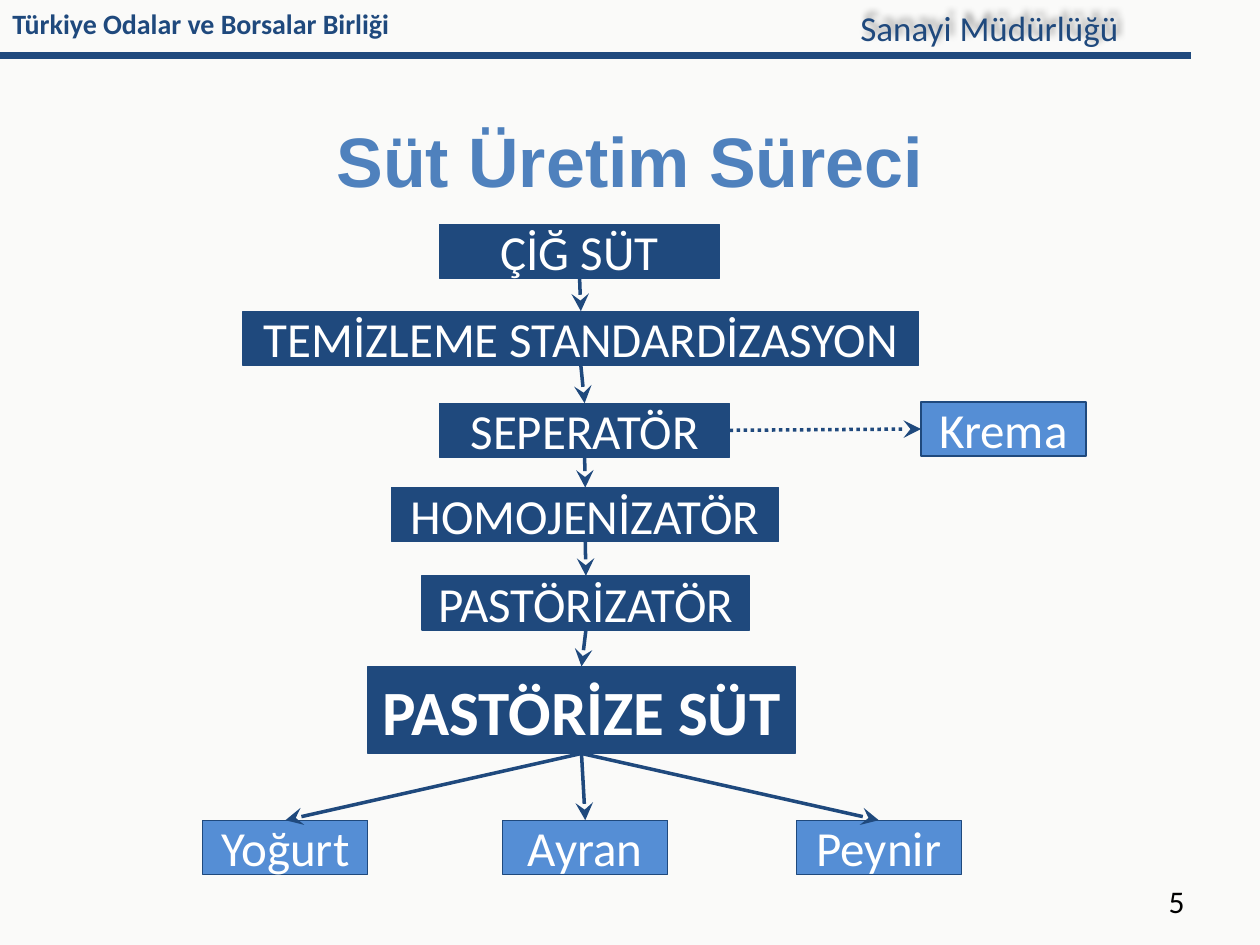
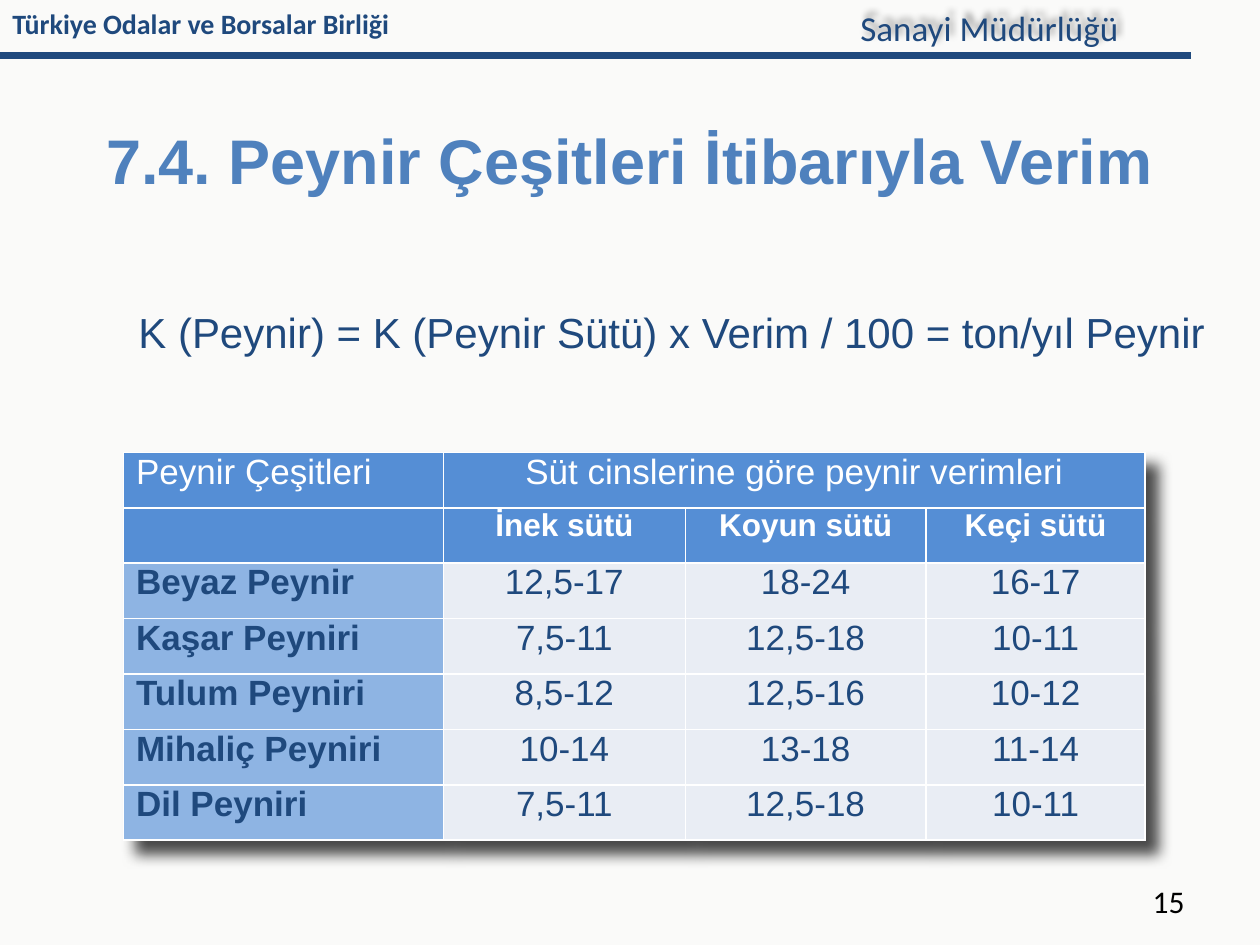
from pptx import Presentation
from pptx.dml.color import RGBColor
from pptx.enum.dml import MSO_LINE
from pptx.enum.shapes import MSO_CONNECTOR, MSO_SHAPE
from pptx.enum.text import MSO_ANCHOR, PP_ALIGN
from pptx.oxml import parse_xml
from pptx.oxml.ns import nsdecls
from pptx.util import Inches, Pt

LEFT, CENTER, RIGHT, JUSTIFY = PP_ALIGN.LEFT, PP_ALIGN.CENTER, PP_ALIGN.RIGHT, PP_ALIGN.JUSTIFY
MIDDLE = MSO_ANCHOR.MIDDLE
RECTANGLE = MSO_SHAPE.RECTANGLE
STRAIGHT = MSO_CONNECTOR.STRAIGHT
DOTTED = MSO_LINE.ROUND_DOT
TOP_SIDE, LEFT_SIDE, BOTTOM_SIDE, RIGHT_SIDE = range(4)

NAVY, BLUE, PALE_BLUE, TITLE_BLUE = "1F497D", "558ED5", "8EB4E3", "4F81BD"
WHITE, BLACK, PAPER, CELL_GREY = "FFFFFF", "000000", "FAFAF9", "E9EDF4"

NO_EFFECTS = f'<a:effectLst {nsdecls("a")}/>'
SHADOW = (f'<a:effectLst {nsdecls("a")}><a:outerShdw blurRad="%d" dist="%d" dir="%d" algn="tl" '
          'rotWithShape="0"><a:srgbClr val="000000"><a:alpha val="%d"/></a:srgbClr>'
          '</a:outerShdw></a:effectLst>')
ARROWHEAD = f'<a:tailEnd {nsdecls("a")} type="stealth" w="lg" len="lg"/>'
BORDER = (f'<a:%s {nsdecls("a")} w="12700"><a:solidFill><a:srgbClr val="{WHITE}"/>'
          '</a:solidFill></a:%s>')


def color(hex_value):
    return RGBColor.from_string(hex_value)


def write(text_frame, text, size, ink, bold=False, align=LEFT, font="Calibri"):
    paragraph = text_frame.paragraphs[0]
    paragraph.text = text
    paragraph.alignment = align
    paragraph.font.name = font
    paragraph.font.size = Pt(size)
    paragraph.font.bold = bold
    paragraph.font.color.rgb = color(ink)
    return paragraph


presentation = Presentation()
presentation.slide_width = Inches(10)
presentation.slide_height = Inches(7.5)
background = presentation.slide_master.background.fill
background.solid()
background.fore_color.rgb = color(PAPER)

# Shared header, title and page number
slides = []
for title, title_size, page_number in [
    ("Süt Üretim Süreci", 40, "5"),
    ("7.4. Peynir Çeşitleri İtibarıyla Verim", 36, "15"),
]:
    slide = presentation.slides.add_slide(presentation.slide_layouts[5])
    slides.append(slide)

    rule = slide.shapes.add_connector(STRAIGHT, 0, Inches(0.44), Inches(9.45), Inches(0.44))
    rule.line.color.rgb = color(NAVY)
    rule.line.width = Pt(4)
    rule._element.spPr.append(parse_xml(NO_EFFECTS))

    for left, top, width, height, text, size, ink, bold, align in [
        (0, 0, 8.15, 0.37, "Türkiye Odalar ve Borsalar Birliği", 16, NAVY, True, LEFT),
        (6.73, 0, 3.27, 0.44, "Sanayi Müdürlüğü", 20, NAVY, False, LEFT),
        (7.17, 6.95, 2.33, 0.4, page_number, 18, BLACK, False, RIGHT),
    ]:
        box = slide.shapes.add_textbox(Inches(left), Inches(top), Inches(width), Inches(height))
        box.text_frame.word_wrap = True
        write(box.text_frame, text, size, ink, bold, align)
        if text == "Sanayi Müdürlüğü":
            box._element.spPr.append(parse_xml(SHADOW % (50800, 50800, 18000000, 40000)))

    heading = slide.shapes.title
    heading.left, heading.top = 0, Inches(0.75)
    heading.width, heading.height = Inches(10), Inches(1.03)
    heading.text_frame.vertical_anchor = MIDDLE
    write(heading.text_frame, title, title_size, TITLE_BLUE, True, CENTER, "Arial")

process_slide, yield_slide = slides

# Process steps and products
steps = [
    ("ÇİĞ SÜT", 3.49, 1.78, 2.22),
    ("TEMİZLEME STANDARDİZASYON", 1.93, 2.47, 5.36),
    ("SEPERATÖR", 3.49, 3.2, 2.3),
    ("HOMOJENİZATÖR", 3.11, 3.87, 3.07),
    ("PASTÖRİZATÖR", 3.35, 4.57, 2.6),
    ("PASTÖRİZE SÜT", 2.92, 5.29, 3.39),
]
products = [
    ("Krema", 7.31, 3.19, 1.31),
    ("Yoğurt", 1.61, 6.51, 1.31),
    ("Ayran", 3.99, 6.51, 1.31),
    ("Peynir", 6.32, 6.51, 1.31),
]
boxes = {}
for fill, group in [(NAVY, steps), (BLUE, products)]:
    for text, left, top, width in group:
        final = text == "PASTÖRİZE SÜT"
        shape = process_slide.shapes.add_shape(
            RECTANGLE, Inches(left), Inches(top), Inches(width), Inches(0.69 if final else 0.43))
        shape.shadow.inherit = False
        shape.fill.solid()
        shape.fill.fore_color.rgb = color(fill)
        shape.line.color.rgb = color(NAVY)
        shape.line.width = Pt(0.75)
        shape.text_frame.word_wrap = False
        shape.text_frame.vertical_anchor = MIDDLE
        write(shape.text_frame, text, 36 if final else 28, WHITE, final, CENTER)
        boxes[text] = shape

# Arrows: down the chain, out to the products, and sideways to the cream
names = [step[0] for step in steps]
links = list(zip(names, names[1:]))
links += [(names[-1], product[0]) for product in products[1:]]
links.append(("SEPERATÖR", "Krema"))
for source, target in links:
    sideways = target == "Krema"
    arrow = process_slide.shapes.add_connector(STRAIGHT, 0, 0, 0, 0)
    arrow.begin_connect(boxes[source], RIGHT_SIDE if sideways else BOTTOM_SIDE)
    arrow.end_connect(boxes[target], LEFT_SIDE if sideways else TOP_SIDE)
    arrow.line.color.rgb = color(NAVY)
    arrow.line.width = Pt(2)
    if sideways:
        arrow.line.dash_style = DOTTED
    arrow.line._get_or_add_ln().append(parse_xml(ARROWHEAD))
    arrow._element.spPr.append(parse_xml(NO_EFFECTS))

# Yield table
rows = [
    ("Peynir Çeşitleri", "Süt cinslerine göre peynir verimleri", "", ""),
    ("", "İnek sütü", "Koyun sütü", "Keçi sütü"),
    ("Beyaz Peynir", "12,5-17", "18-24", "16-17"),
    ("Kaşar Peyniri", "7,5-11", "12,5-18", "10-11"),
    ("Tulum Peyniri", "8,5-12", "12,5-16", "10-12"),
    ("Mihaliç Peyniri", "10-14", "13-18", "11-14"),
    ("Dil Peyniri", "7,5-11", "12,5-18", "10-11"),
]
table = yield_slide.shapes.add_table(
    len(rows), 4, Inches(0.98), Inches(3.59), Inches(8.11), Inches(3.07)).table
table.first_row = False
table.horz_banding = False
table._tbl.tblPr.insert(0, parse_xml(SHADOW % (101600, 127000, 2700000, 70000)))
for column, width in zip(table.columns, [2.54, 1.92, 1.91, 1.74]):
    column.width = Inches(width)
for row_index, row in enumerate(rows):
    table.rows[row_index].height = Inches(0.44)
    for column_index, text in enumerate(row):
        cell = table.cell(row_index, column_index)
        header, label = row_index < 2, column_index == 0
        cell.margin_left = Inches(0.1 if label else 0.02)
        cell.margin_right = Inches(0.02)
        cell.margin_top = cell.margin_bottom = 0
        for side in ("lnL", "lnR", "lnT", "lnB"):
            cell._tc.get_or_add_tcPr().append(parse_xml(BORDER % (side, side)))
        cell.fill.solid()
        cell.fill.fore_color.rgb = color(BLUE if header else PALE_BLUE if label else CELL_GREY)
        if text:
            write(cell.text_frame, text, 18 if row_index == 1 else 20,
                  WHITE if header else NAVY, row_index == 1 or (label and not header),
                  LEFT if label else CENTER, "Arial")
table.cell(0, 1).merge(table.cell(0, 3))

# Yield formula
formula = yield_slide.shapes.add_textbox(Inches(0.75), Inches(2.18), Inches(9.25), Inches(0.63))
formula.text_frame.word_wrap = True
paragraph = write(formula.text_frame, "K (Peynir) = K (Peynir Sütü) x Verim / 100 = ton/yıl Peynir",
                  24, NAVY, align=JUSTIFY, font="Arial")
paragraph.line_spacing = 1.5
paragraph._p.get_or_add_pPr().set("marL", str(Inches(0.25)))

presentation.save("out.pptx")
